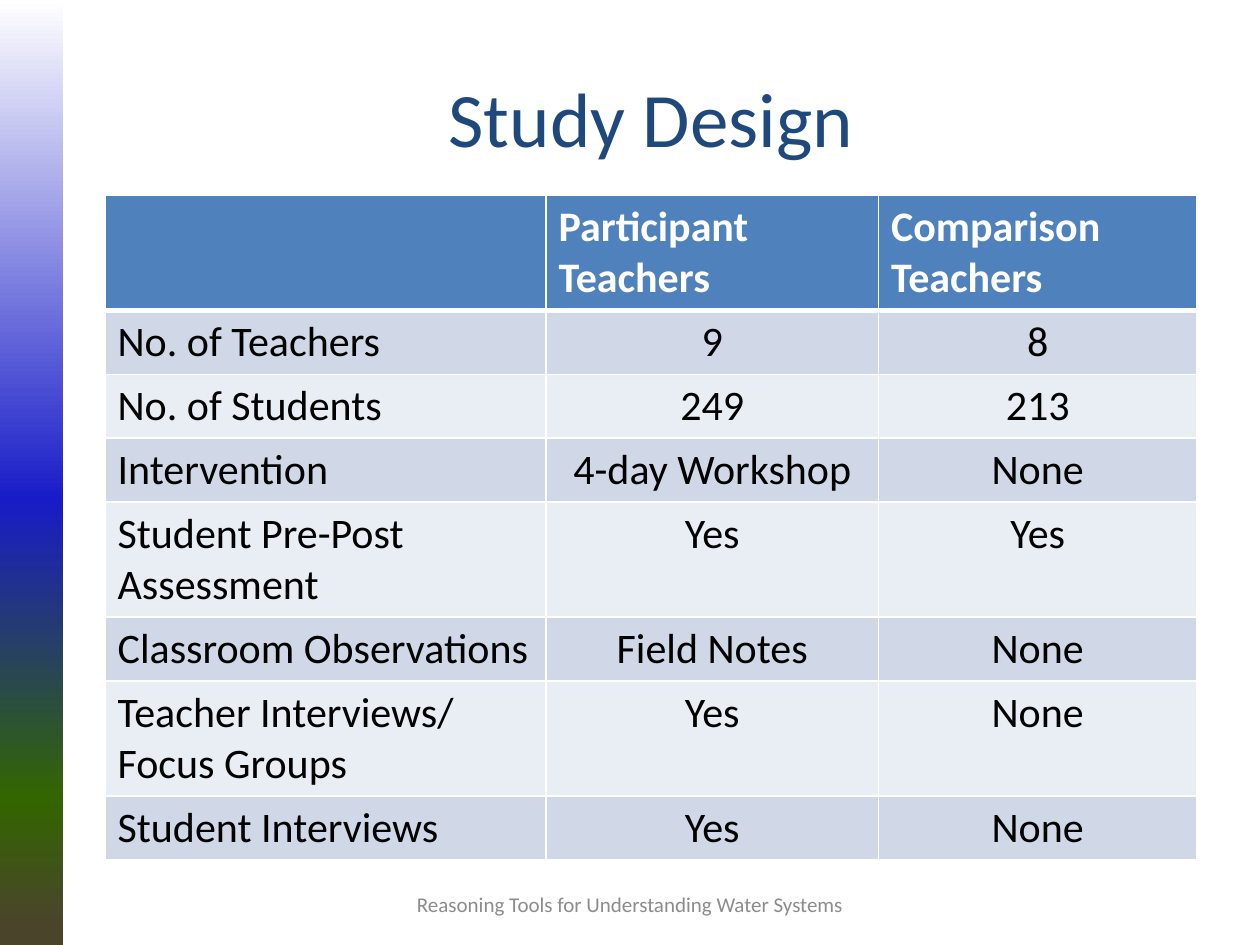
import pptx
import pptx.util
import pptx.dml.color
import pptx.enum.shapes
import pptx.enum.text
import pptx.oxml
import pptx.oxml.ns

Pt = pptx.util.Pt
RGBColor = pptx.dml.color.RGBColor
PP_ALIGN = pptx.enum.text.PP_ALIGN

TITLE = "Study Design"
FOOTER = "Reasoning Tools for Understanding Water Systems"
DESIGN = [
    ("", "Participant Teachers", "Comparison Teachers"),
    ("No. of Teachers", "9", "8"),
    ("No. of Students", "249", "213"),
    ("Intervention", "4-day Workshop", "None"),
    ("Student Pre-Post Assessment", "Yes", "Yes"),
    ("Classroom Observations", "Field Notes", "None"),
    ("Teacher Interviews/ Focus Groups", "Yes", "None"),
    ("Student Interviews", "Yes", "None"),
]
TWO_LINE_ROWS = {0, 4, 6}
COLUMN_WIDTHS = (252, 190, 182)
LINE_HEIGHT = 29.3
CELL_PADDING = 7.2

FONT = "Calibri"
WHITE = RGBColor(0xFF, 0xFF, 0xFF)
BLACK = RGBColor(0x00, 0x00, 0x00)
NAVY = RGBColor(0x1F, 0x49, 0x7D)
GRAY = RGBColor(0x8C, 0x8C, 0x8C)
HEADER_BLUE = RGBColor(0x4F, 0x81, 0xBD)
BANDS = (RGBColor(0xE9, 0xED, 0xF4), RGBColor(0xD0, 0xD8, 0xE8))
WATER_STOPS = [
    (0, WHITE),
    (52, RGBColor(0x18, 0x1C, 0xC7)),
    (83, RGBColor(0x33, 0x66, 0x00)),
    (96, RGBColor(0x4A, 0x45, 0x2A)),
]


def style(paragraph, size, color, align, bold=False):
    paragraph.alignment = align
    paragraph.font.name = FONT
    paragraph.font.size = Pt(size)
    paragraph.font.color.rgb = color
    paragraph.font.bold = bold


def add_label(slide, text, box, size, color):
    frame = slide.shapes.add_textbox(*map(Pt, box)).text_frame
    frame.word_wrap = True
    frame.vertical_anchor = pptx.enum.text.MSO_ANCHOR.MIDDLE
    frame.text = text
    style(frame.paragraphs[0], size, color, PP_ALIGN.CENTER)


def add_water_band(slide):
    band = slide.shapes.add_shape(
        pptx.enum.shapes.MSO_SHAPE.RECTANGLE, Pt(-10.8), Pt(0), Pt(46.8), Pt(549.4))
    band.shadow.inherit = False
    band.line.fill.background()
    band.fill.gradient()
    band.fill.gradient_angle = 270
    stops = band.element.spPr.find(".//" + pptx.oxml.ns.qn("a:gsLst"))
    for stop in list(stops):
        stops.remove(stop)
    for percent, color in WATER_STOPS:
        stops.append(pptx.oxml.parse_xml(
            f'<a:gs {pptx.oxml.ns.nsdecls("a")} pos="{percent * 1000}">'
            f'<a:srgbClr val="{color}"/></a:gs>'))


def set_borders(cell, widths):
    properties = cell._tc.get_or_add_tcPr()
    for side, width in zip("LRTB", widths):
        properties.append(pptx.oxml.parse_xml(
            f'<a:ln{side} {pptx.oxml.ns.nsdecls("a")} w="{Pt(width)}">'
            f'<a:solidFill><a:srgbClr val="{WHITE}"/></a:solidFill></a:ln{side}>'))


def add_design_table(slide):
    heights = [LINE_HEIGHT * (2 if row in TWO_LINE_ROWS else 1) + CELL_PADDING
               for row in range(len(DESIGN))]
    table = slide.shapes.add_table(
        len(DESIGN), len(COLUMN_WIDTHS), Pt(60), Pt(111.6),
        Pt(sum(COLUMN_WIDTHS)), Pt(sum(heights))).table
    for column, width in zip(table.columns, COLUMN_WIDTHS):
        column.width = Pt(width)
    for r, entries in enumerate(DESIGN):
        table.rows[r].height = Pt(heights[r])
        header = r == 0
        for c, entry in enumerate(entries):
            cell = table.cell(r, c)
            set_borders(cell, (1, 1, 3 if r == 1 else 1, 3 if header else 1))
            cell.fill.solid()
            cell.fill.fore_color.rgb = HEADER_BLUE if header else BANDS[r % 2]
            cell.text = entry
            align = PP_ALIGN.LEFT if header or c == 0 else PP_ALIGN.CENTER
            style(cell.text_frame.paragraphs[0], 24,
                  WHITE if header else BLACK, align, header)


def main():
    deck = pptx.Presentation()
    deck.slide_width, deck.slide_height = Pt(720), Pt(540)
    slide = deck.slides.add_slide(deck.slide_layouts[6])
    add_water_band(slide)
    add_label(slide, TITLE, (60, 21.6, 624, 90), 44, NAVY)
    add_design_table(slide)
    add_label(slide, FOOTER, (225, 502, 270, 28.8), 12, GRAY)
    deck.save("out.pptx")


if __name__ == "__main__":
    main()
